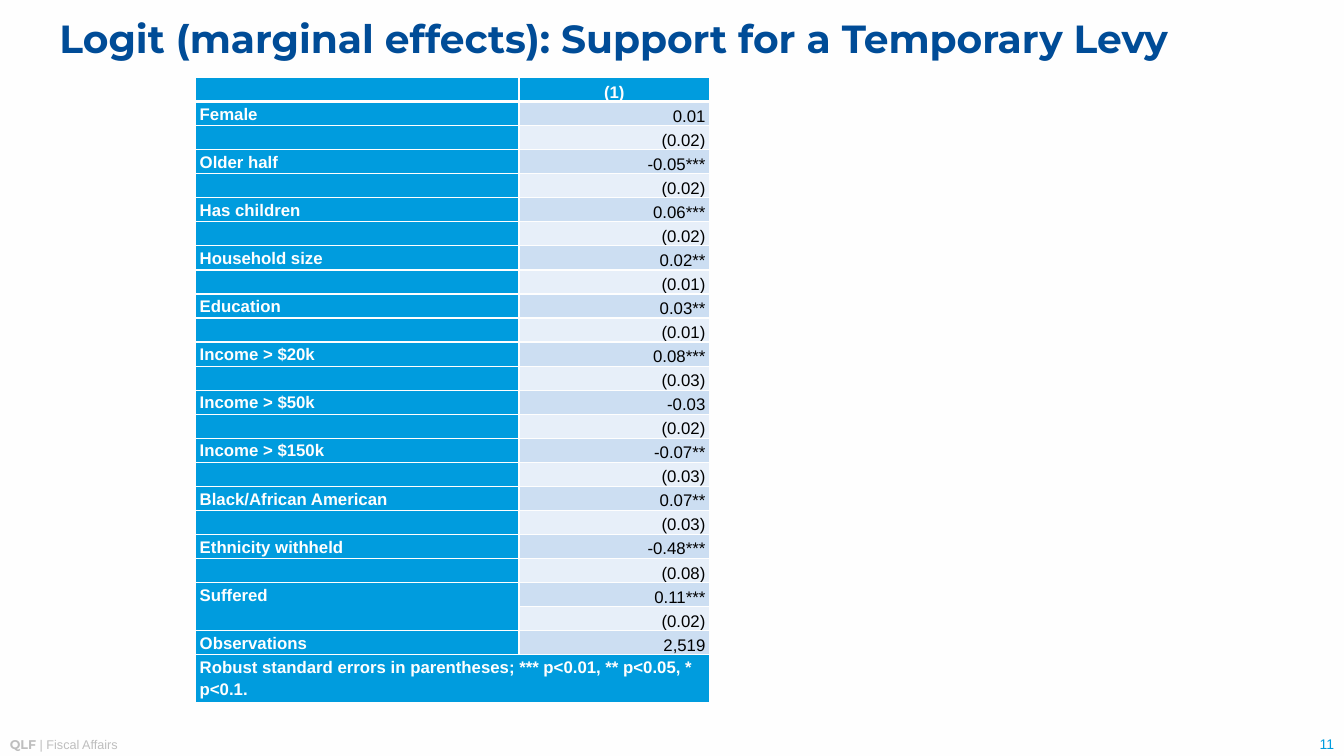
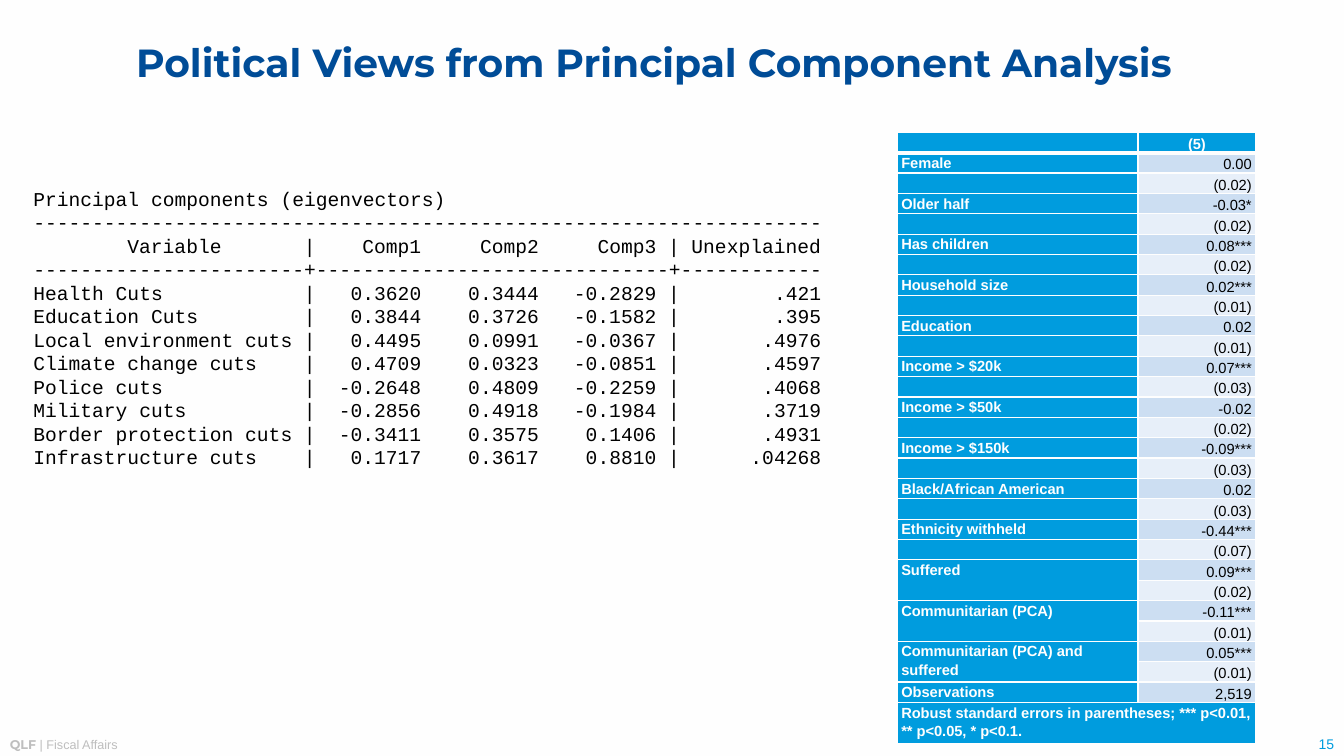
from dataclasses import dataclass
from lxml import etree
from pptx import Presentation
from pptx.dml.color import RGBColor
from pptx.enum import text as t
from pptx.oxml import ns
from pptx.util import Pt


@dataclass(frozen=True)
class Theme:
    paper: str = "FEFEFE"
    navy: str = "004C97"
    blue: str = "009CDE"
    grey: str = "BEBEBE"
    ink: str = "000000"
    bands: tuple = ("E7EFF9", "CCDEF2")
    head: str = "Montserrat"
    body: str = "Arial"
    mono: str = "Courier New"
    title: float = 28
    code: float = 14
    page: float = 10
    foot: float = 9
    large: float = 12
    small: float = 10.5


TH = Theme()
ALIGN = {"l": t.PP_ALIGN.LEFT, "c": t.PP_ALIGN.CENTER, "r": t.PP_ALIGN.RIGHT}
ANCHOR = {"t": t.MSO_ANCHOR.TOP, "m": t.MSO_ANCHOR.MIDDLE, "b": t.MSO_ANCHOR.BOTTOM}

LABELS = ["Female", "Older half", "Has children", "Household size", "Education",
          "Income > $20k", "Income > $50k", "Income > $150k",
          "Black/African American", "Ethnicity withheld", "Suffered",
          "Communitarian (PCA)", "Communitarian (PCA) and suffered"]
TALL = LABELS[10:]
NOTE = "Robust standard errors in parentheses; *** p<0.01, ** p<0.05, * p<0.1."

LEVY = [("0.01", "0.02"), ("-0.05***", "0.02"), ("0.06***", "0.02"),
        ("0.02**", "0.01"), ("0.03**", "0.01"), ("0.08***", "0.03"),
        ("-0.03", "0.02"), ("-0.07**", "0.03"), ("0.07**", "0.03"),
        ("-0.48***", "0.08"), ("0.11***", "0.02")]
VIEWS = [("0.00", "0.02"), ("-0.03*", "0.02"), ("0.08***", "0.02"),
         ("0.02***", "0.01"), ("0.02", "0.01"), ("0.07***", "0.03"),
         ("-0.02", "0.02"), ("-0.09***", "0.03"), ("0.02", "0.03"),
         ("-0.44***", "0.07"), ("0.09***", "0.02"), ("-0.11***", "0.01"),
         ("0.05***", "0.01")]
PARTS = [("Health Cuts", "0.3620", "0.3444", "-0.2829", ".421"),
         ("Education Cuts", "0.3844", "0.3726", "-0.1582", ".395"),
         ("Local environment cuts", "0.4495", "0.0991", "-0.0367", ".4976"),
         ("Climate change cuts", "0.4709", "0.0323", "-0.0851", ".4597"),
         ("Police cuts", "-0.2648", "0.4809", "-0.2259", ".4068"),
         ("Military cuts", "-0.2856", "0.4918", "-0.1984", ".3719"),
         ("Border protection cuts", "-0.3411", "0.3575", "0.1406", ".4931"),
         ("Infrastructure cuts", "0.1717", "0.3617", "0.8810", ".04268")]
STOPS = [(8, "l"), (23, "l"), (33, "r"), (43, "r"), (55, "r"), (67, "r")]


def write(par, words, size=TH.large, font=TH.body, ink=TH.ink, bold=False,
          align="l", line=None):
    par.alignment = ALIGN[align]
    if line:
        par.line_spacing = line
    run = par.add_run()
    run.text = words
    run.font.size, run.font.name, run.font.bold = Pt(size), font, bold
    run.font.color.rgb = RGBColor.from_string(ink)


def frame(slide, box, inset=(7.2, 3.6, 7.2, 3.6), anchor="t"):
    body = slide.shapes.add_textbox(*map(Pt, box)).text_frame
    body.word_wrap = True
    body.vertical_anchor = ANCHOR[anchor]
    (body.margin_left, body.margin_top,
     body.margin_right, body.margin_bottom) = map(Pt, inset)
    return body


def base(deck, title, box, page):
    slide = deck.slides.add_slide(deck.slide_layouts[6])
    slide.background.fill.solid()
    slide.background.fill.fore_color.rgb = RGBColor.from_string(TH.paper)
    foot = frame(slide, (0, 522.7, 720, 18)).paragraphs[0]
    write(foot, "QLF ", size=TH.foot, font=TH.head, ink=TH.grey, bold=True)
    write(foot, "| Fiscal Affairs", size=TH.foot, ink=TH.grey)
    num = frame(slide, (864.7, 521.3, 95.3, 19.4), anchor="b").paragraphs[0]
    write(num, page, size=TH.page, ink=TH.blue, align="r")
    top = frame(slide, box, (0, 0, 0, 0), "m").paragraphs[0]
    write(top, title, size=TH.title, font=TH.head, ink=TH.navy, bold=True, line=0.9)
    return slide


def border(cell, low):
    props = cell._tc.get_or_add_tcPr()
    for side, wide in zip("LRTB", (1, 1, 1, low)):
        line = etree.SubElement(props, ns.qn("a:ln" + side), w=str(Pt(wide)))
        fill = etree.SubElement(line, ns.qn("a:solidFill"))
        etree.SubElement(fill, ns.qn("a:srgbClr"), val=TH.paper)


def paint(cell, words, size, fill, line, edge=1, anchor="t", **form):
    border(cell, edge)
    cell.fill.solid()
    cell.fill.fore_color.rgb = RGBColor.from_string(fill)
    cell.margin_left = cell.margin_right = Pt(3)
    cell.margin_top = cell.margin_bottom = 0
    cell.vertical_anchor = ANCHOR[anchor]
    par = cell.text_frame.paragraphs[0]
    if words:
        write(par, words, size=size, line=line, **form)
    else:
        end = etree.SubElement(par._p, ns.qn("a:endParaRPr"), sz=str(int(size * 100)))
        etree.SubElement(end, ns.qn("a:latin"), typeface=TH.body)


def results(slide, box, cols, size, step, line, model, pairs):
    rows = [("", model)]
    for name, (coef, err) in zip(LABELS, pairs):
        rows += [(name, coef), ("", f"({err})")]
    rows += [("Observations", "2,519"), (NOTE, "")]
    last = len(rows) - 1
    high = step * (last + 2)
    grid = slide.shapes.add_table(len(rows), 2, *map(Pt, (*box, sum(cols), high))).table
    for col, wide in zip(grid.columns, cols):
        col.width = Pt(wide)
    for i, (name, value) in enumerate(rows):
        grid.rows[i].height = Pt(step * (2 if i == last else 1))
        top = i == 0
        solid = top or i == last
        edge = 3 if top else 1
        paint(grid.cell(i, 0), name, size, TH.blue, line, edge, ink=TH.paper, bold=True)
        paint(grid.cell(i, 1), value, size, TH.blue if solid else TH.bands[i % 2],
              line, edge, "b", ink=TH.paper if top else TH.ink, bold=top,
              align="c" if top else "r")
    for i, (name, _) in enumerate(rows):
        if name in TALL:
            grid.cell(i, 0).merge(grid.cell(i + 1, 0))
    grid.cell(last, 0).merge(grid.cell(last, 1))


def set_tabs(par):
    tabs = etree.SubElement(par._p.get_or_add_pPr(), ns.qn("a:tabLst"))
    for col, side in STOPS:
        etree.SubElement(tabs, ns.qn("a:tab"), pos=str(Pt(col * TH.code * 0.6)), algn=side)


def listing(slide, box):
    head = ("\tVariable", "Comp1", "Comp2", "Comp3", "Unexplained")
    table = ["{}\t|\t{}\t{}\t{} |\t{}".format(*row) for row in [head, *PARTS]]
    rule = "-" * 23 + "+" + "-" * 30 + "+" + "-" * 12
    lines = ["Principal components (eigenvectors)", "-" * 67, table[0], rule, *table[1:]]
    body = frame(slide, box, (0, 11.5, 0, 0))
    for i, words in enumerate(lines):
        par = body.add_paragraph() if i else body.paragraphs[0]
        write(par, words, size=TH.code, font=TH.mono)
        if "\t" in words:
            set_tabs(par)


def levy(deck):
    slide = base(deck, "Logit (marginal effects): Support for a Temporary Levy",
                 (42.5, 2.9, 868.3, 52.5), "11")
    results(slide, (139.7, 55.4), (231.1, 136.1), TH.large, 17.2, 1.18, "(1)", LEVY)


def views(deck):
    slide = base(deck, "Political Views from Principal Component Analysis",
                 (97.2, 7.9, 831.6, 77), "15")
    listing(slide, (23.8, 121.7, 579.6, 321))
    results(slide, (640.8, 94.5), (172.1, 84.2), TH.small, 14.57, 1.15, "(5)", VIEWS)


def main():
    deck = Presentation()
    deck.slide_width, deck.slide_height = Pt(960), Pt(540)
    levy(deck)
    views(deck)
    deck.save("out.pptx")


if __name__ == "__main__":
    main()
